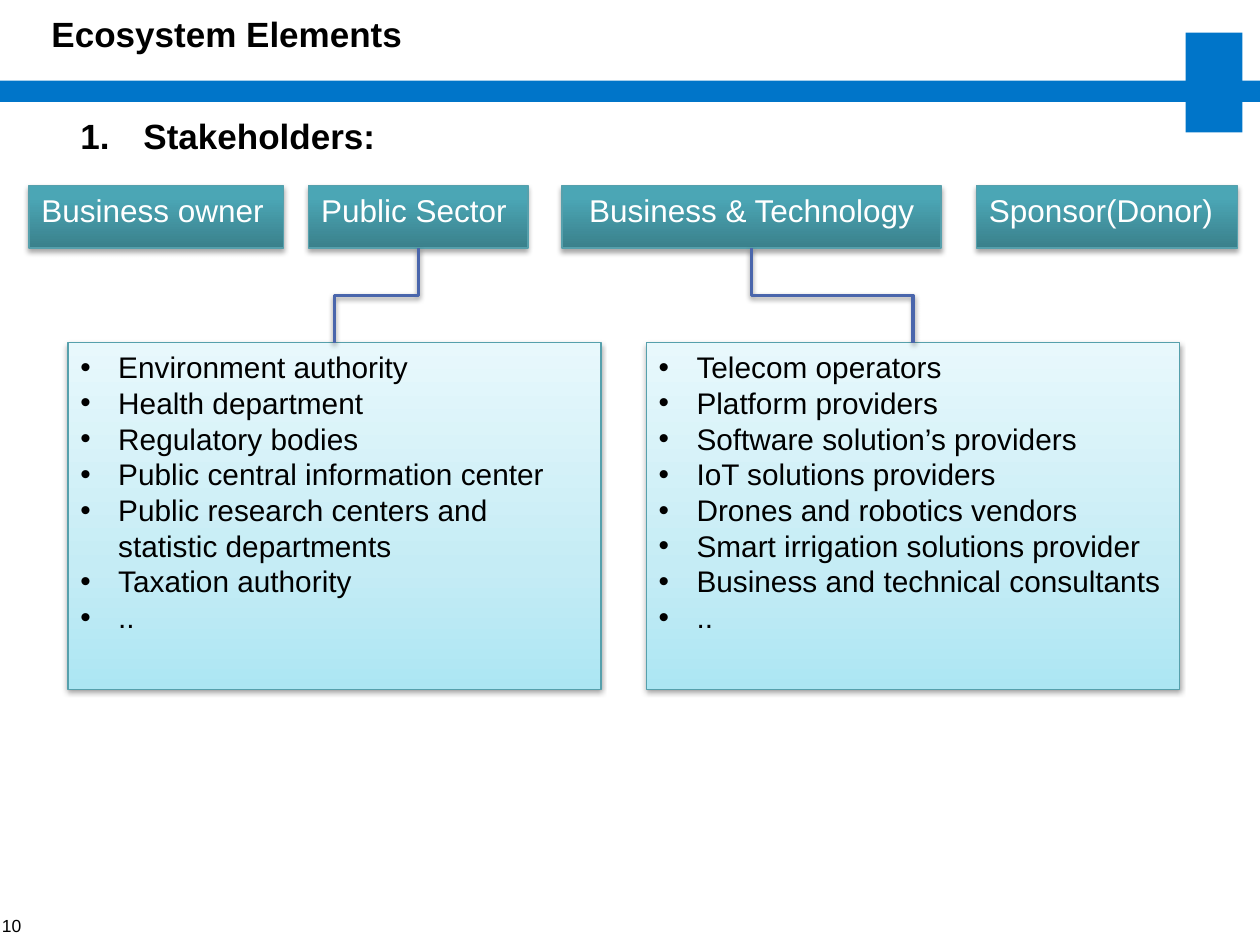
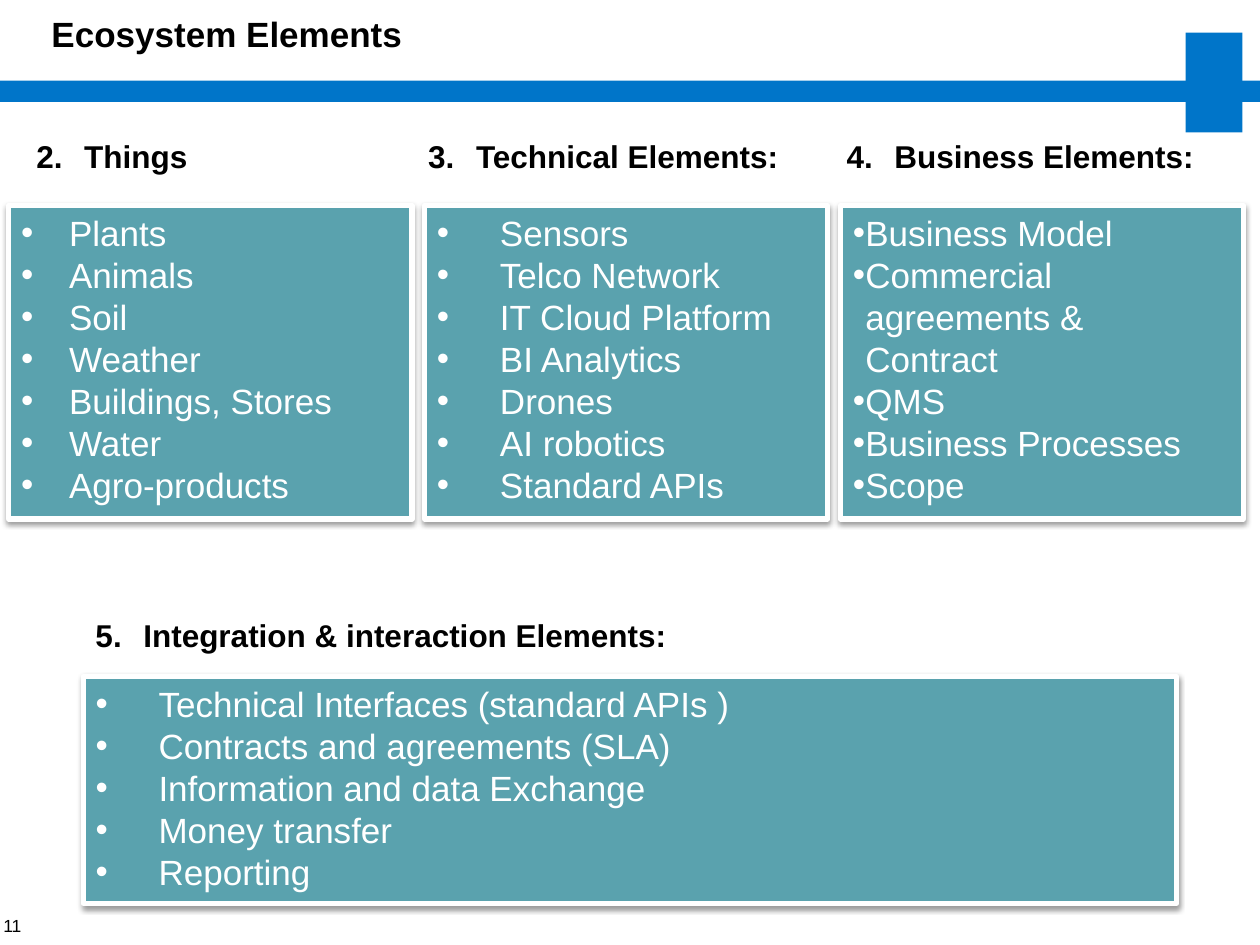
from pptx import Presentation
from pptx import util as u
from pptx.dml.color import RGBColor
from pptx.enum import shapes, text
from pptx.oxml import parse_xml
from pptx.oxml import ns

# Content
TITLE = "Ecosystem Elements"
STAKEHOLDERS = (1, "Stakeholders:")
SECTORS = [  # label, left, width, alignment
    ("Business owner", 0.23, 2.02, text.PP_ALIGN.LEFT),
    ("Public Sector", 2.45, 1.74, text.PP_ALIGN.LEFT),
    ("Business & Technology", 4.46, 3.01, text.PP_ALIGN.CENTER),
    ("Sponsor(Donor)", 7.75, 2.07, text.PP_ALIGN.LEFT),
]
MEMBERS = {  # sector -> its members
    "Public Sector": [
        "Environment authority", "Health department", "Regulatory bodies",
        "Public central information center",
        "Public research centers and statistic departments",
        "Taxation authority", "..",
    ],
    "Business & Technology": [
        "Telecom operators", "Platform providers",
        "Software solution’s providers", "IoT solutions providers",
        "Drones and robotics vendors", "Smart irrigation solutions provider",
        "Business and technical consultants", "..",
    ],
}
COLUMNS = [  # number, heading, heading offset, (margin, indent), items
    (2, "Things", 0.12, (0.38, -0.38),
     ["Plants", "Animals", "Soil", "Weather", "Buildings, Stores", "Water",
      "Agro-products"]),
    (3, "Technical Elements:", -0.07, (0.5, -0.5),
     ["Sensors", "Telco Network", "IT Cloud Platform", "BI Analytics",
      "Drones", "AI robotics", "Standard APIs"]),
    (4, "Business Elements:", -0.05, (0.1, -0.38),
     ["Business Model", "Commercial agreements &\vContract", "QMS",
      "Business Processes", "Scope"]),
]
INTEGRATION = (5, "Integration & interaction Elements:")
INTEGRATION_ITEMS = [
    "Technical Interfaces (standard APIs )", "Contracts and agreements (SLA)",
    "Information and data Exchange", "Money transfer", "Reporting",
]

# Style
FONT = "Arial"
BLACK = RGBColor(0x00, 0x00, 0x00)
WHITE = RGBColor(0xFF, 0xFF, 0xFF)
BAND_BLUE = RGBColor(0x00, 0x75, 0xC9)
LINK_BLUE = RGBColor(0x4A, 0x66, 0xAC)
TEAL = RGBColor(0x5A, 0xA2, 0xAE)
EDGE_TEAL = RGBColor(0x56, 0xA0, 0xAC)
DARK_TEAL = [(0, RGBColor(0x3A, 0x80, 0x8B)), (80, RGBColor(0x4B, 0xA6, 0xB5)),
             (100, RGBColor(0x49, 0xA8, 0xB8))]
PALE_TEAL = [(0, RGBColor(0xAC, 0xE6, 0xF3)), (35, RGBColor(0xC5, 0xEC, 0xF5)),
             (100, RGBColor(0xE8, 0xF8, 0xFC))]

# Layout, in inches
WIDTH, HEIGHT = 10, 7.5
SECTOR_TOP, SECTOR_HEIGHT = 1.47, 0.5
LIST_LEFT, LIST_TOP, LIST_PITCH = 0.54, 2.72, 4.59
LIST_WIDTH, LIST_HEIGHT = 4.23, 2.75
COLUMN_LEFT, COLUMN_PITCH, COLUMN_WIDTH = 0.07, 3.3, 3.2
COLUMN_TOP, COLUMN_HEIGHT = 1.63, 2.49


def inches(*lengths):
    return [u.Inches(length) for length in lengths]


def element(tag, inner="", **attributes):
    """Make one drawing element, with optional inner markup."""
    pairs = "".join(f' {name}="{value}"' for name, value in attributes.items())
    return parse_xml(f'<a:{tag} {ns.nsdecls("a")}{pairs}>{inner}</a:{tag}>')


def cast_shadow(shape, alpha=38, distance=1.6):
    color = f'<a:srgbClr val="000000"><a:alpha val="{alpha * 1000}"/></a:srgbClr>'
    shadow = (f'<a:outerShdw blurRad="{u.Pt(3.1)}" dist="{u.Pt(distance)}" '
              f'dir="5400000" rotWithShape="0">{color}</a:outerShdw>')
    shape._element.spPr.append(element("effectLst", shadow))


def fill_upward(shape, stops):
    marks = "".join(f'<a:gs pos="{share * 1000}"><a:srgbClr val="{color}"/></a:gs>'
                    for share, color in stops)
    gradient = element("gradFill", f'<a:gsLst>{marks}</a:gsLst>'
                       '<a:lin ang="16200000" scaled="0"/>', rotWithShape=1)
    shape._element.spPr.find(ns.qn("a:prstGeom")).addnext(gradient)


def write(shape, lines, size, color=BLACK, bold=False, indent=None, number=None,
          align=text.PP_ALIGN.LEFT):
    """Fill a shape with paragraphs; an indent makes them bulleted or numbered."""
    frame = shape.text_frame
    frame.word_wrap = True
    frame.vertical_anchor = text.MSO_ANCHOR.TOP
    frame.text = "\n".join(lines)
    for para in frame.paragraphs:
        para.alignment = align
        if indent:
            props = para._p.get_or_add_pPr()
            margin, hang = inches(*indent)
            props.set("marL", str(margin))
            props.set("indent", str(hang))
            if number:
                props.append(element("buAutoNum", type="arabicPeriod", startAt=number))
            else:
                props.append(element("buFont", typeface=FONT))
                props.append(element("buChar", char="•"))
        for span in para.runs:
            span.font.name, span.font.size = FONT, u.Pt(size)
            span.font.bold, span.font.color.rgb = bold, color


def add_label(page, place, words, size, **style):
    box = page.shapes.add_textbox(*inches(*place))
    write(box, [words], size, **style)
    return box


def add_heading(page, left, top, width, heading, size=18, indent=0.38):
    number, words = heading
    add_label(page, (left, top, width, size / 45), words, size, bold=True,
              indent=(indent, -indent), number=number)


def add_panel(page, place, fill, edge=EDGE_TEAL, edge_width=0.75, **shadow):
    panel = page.shapes.add_shape(shapes.MSO_SHAPE.RECTANGLE, *inches(*place))
    if isinstance(fill, list):
        fill_upward(panel, fill)
    else:
        panel.fill.solid()
        panel.fill.fore_color.rgb = fill
    panel.line.color.rgb = edge
    panel.line.width = u.Pt(edge_width)
    cast_shadow(panel, **shadow)
    return panel


def add_teal_list(page, place, items, indent):
    panel = add_panel(page, place, TEAL, WHITE, 3)
    write(panel, items, 20, WHITE, indent=indent)


def add_link(page, list_x, list_y, sector_x, sector_y):
    """Bent line that leaves and arrives vertically: a quarter-turned elbow."""
    middle_x, middle_y = (list_x + sector_x) / 2, (list_y + sector_y) / 2
    half_run, half_rise = (list_x - sector_x) / 2, (list_y - sector_y) / 2
    link = page.shapes.add_connector(
        shapes.MSO_CONNECTOR.ELBOW,
        *inches(middle_x - half_rise, middle_y + half_run,
                middle_x + half_rise, middle_y - half_run))
    link._element.spPr.find(ns.qn("a:xfrm")).set("rot", str(270 * 60000))
    link.line.color.rgb = LINK_BLUE
    link.line.width = u.Pt(2)
    cast_shadow(link)


def add_page(deck, number):
    """Blank page with the shared bands, title and page number."""
    page = deck.slides.add_slide(deck.slide_layouts[6])
    for place in [(0, 0.64, WIDTH, 0.17), (9.41, 0.26, 0.45, 0.79)]:
        band = page.shapes.add_shape(shapes.MSO_SHAPE.RECTANGLE, *inches(*place))
        band.fill.solid()
        band.fill.fore_color.rgb = BAND_BLUE
        band.line.fill.background()
        band.shadow.inherit = False
    add_label(page, (0.31, 0.05, 9.38, 0.67), TITLE, 20, bold=True)
    footer = add_label(page, (0, 7.26, 0.17, 0.17), str(number), 10,
                       align=text.PP_ALIGN.RIGHT)
    frame = footer.text_frame
    frame.word_wrap = False
    frame.margin_left = frame.margin_right = 0
    frame.margin_top = frame.margin_bottom = 0
    frame.vertical_anchor = text.MSO_ANCHOR.MIDDLE
    return page


def build_stakeholders(deck):
    page = add_page(deck, 10)
    add_heading(page, 0.54, 0.86, 2.57, STAKEHOLDERS, size=20, indent=0.5)
    centers = {}
    for label, left, width, align in SECTORS:
        panel = add_panel(page, (left, SECTOR_TOP, width, SECTOR_HEIGHT),
                          DARK_TEAL, alpha=35, distance=1.8)
        write(panel, [label], 18, WHITE, align=align)
        centers[label] = left + width / 2
    for column, (sector, members) in enumerate(MEMBERS.items()):
        left = LIST_LEFT + column * LIST_PITCH
        panel = add_panel(page, (left, LIST_TOP, LIST_WIDTH, LIST_HEIGHT), PALE_TEAL)
        write(panel, members, 17, indent=(0.3, -0.38))
        add_link(page, left + LIST_WIDTH / 2, LIST_TOP,
                 centers[sector], SECTOR_TOP + SECTOR_HEIGHT)


def build_elements(deck):
    page = add_page(deck, 11)
    for column, (number, words, offset, indent, items) in enumerate(COLUMNS):
        left = COLUMN_LEFT + column * COLUMN_PITCH
        add_heading(page, left + offset, 1.04, 3.15, (number, words))
        add_teal_list(page, (left, COLUMN_TOP, COLUMN_WIDTH, COLUMN_HEIGHT),
                      items, indent)
    add_heading(page, 0.66, 4.84, 5.04, INTEGRATION)
    add_teal_list(page, (0.66, 5.37, 8.68, 1.8), INTEGRATION_ITEMS, (0.5, -0.5))


def main():
    deck = Presentation()
    deck.slide_width, deck.slide_height = inches(WIDTH, HEIGHT)
    build_stakeholders(deck)
    build_elements(deck)
    deck.save("out.pptx")


if __name__ == "__main__":
    main()
